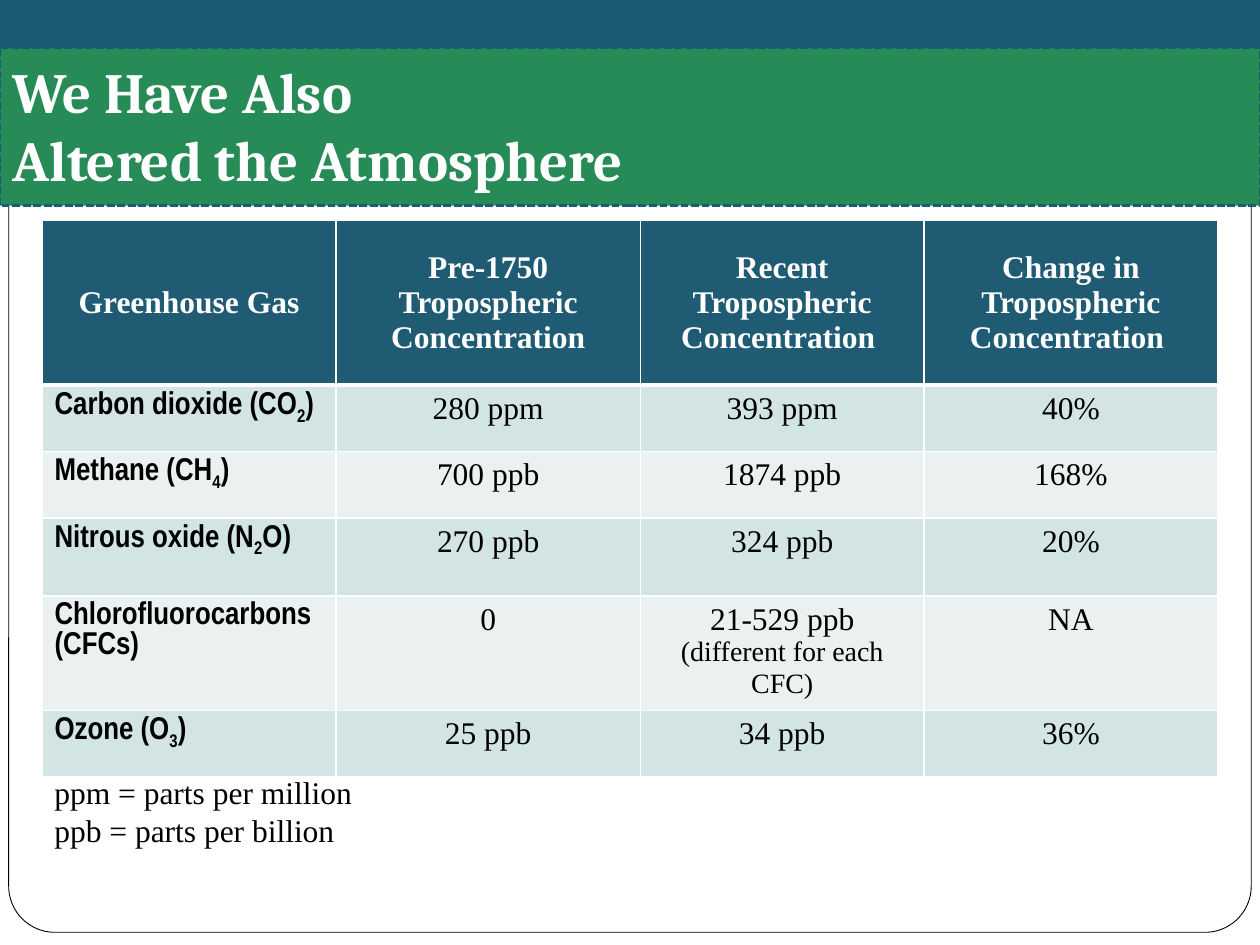
from dataclasses import dataclass

from lxml.etree import SubElement
from pptx import Presentation
from pptx.dml.color import RGBColor
from pptx.enum.dml import MSO_LINE
from pptx.enum.shapes import MSO_SHAPE
from pptx.enum.text import MSO_ANCHOR, PP_ALIGN
from pptx.oxml.ns import qn
from pptx.util import Pt


@dataclass(frozen=True)
class Theme:
    white: RGBColor = RGBColor.from_string("FFFFFF")
    black: RGBColor = RGBColor.from_string("000000")
    blue: RGBColor = RGBColor.from_string("1B5C75")
    green: RGBColor = RGBColor.from_string("278B57")
    header: RGBColor = RGBColor.from_string("1F5B73")
    bands: tuple = (RGBColor.from_string("D2E4E4"), RGBColor.from_string("EBF0F1"))
    title_font: str = "Cambria"
    label_font: str = "Arial Narrow"
    body_font: str = "Times New Roman"
    title_size: float = 32.4
    body_size: float = 18
    note_size: float = 16


THEME = Theme()


def style_runs(paragraph, font, size, color, bold=False):
    for run in paragraph.runs:
        run.font.name = font
        run.font.size = Pt(size)
        run.font.color.rgb = color
        run.font.bold = bold


def add_panel(kind, left, top, width, height, fill, line, line_width):
    panel = slide.shapes.add_shape(kind, Pt(left), Pt(top), Pt(width), Pt(height))
    panel.shadow.inherit = False
    panel.fill.solid()
    panel.fill.fore_color.rgb = fill
    panel.line.color.rgb = line
    panel.line.width = Pt(line_width)
    return panel


prs = Presentation()
prs.slide_width, prs.slide_height = Pt(720), Pt(540)
slide = prs.slides.add_slide(prs.slide_layouts[6])

frame = add_panel(MSO_SHAPE.ROUNDED_RECTANGLE, 5, 5.75, 710, 527,
                  THEME.white, THEME.black, 0.5)
frame.adjustments[0] = 0.05

# Gas names are split into runs, so every second part is a subscript.
HEADINGS = [
    "Greenhouse Gas",
    "Pre-1750 Tropospheric Concentration",
    "Recent Tropospheric Concentration ",
    "Change in Tropospheric Concentration ",
]
GASES = [
    (("Carbon dioxide (CO", "2", ")"), "280 ppm", "393 ppm", "40%"),
    (("Methane (CH", "4", ")"), "700 ppb", "1874 ppb", "168%"),
    (("Nitrous oxide (N", "2", "O)"), "270 ppb", "324 ppb", "20%"),
    (("Chlorofluorocarbons (CFCs)",), "0",
     "21-529 ppb\n(different for each CFC)", "NA"),
    (("Ozone (O", "3", ")"), "25 ppb", "34 ppb", "36%"),
]
COLUMN_WIDTHS = [168, 174, 162, 168]
ROW_HEIGHTS = [94, 38, 38, 44.5, 65.5, 38]

gas_table = slide.shapes.add_table(
    len(ROW_HEIGHTS), len(COLUMN_WIDTHS), Pt(24), Pt(126),
    Pt(sum(COLUMN_WIDTHS)), Pt(sum(ROW_HEIGHTS))).table
for column, width in zip(gas_table.columns, COLUMN_WIDTHS):
    column.width = Pt(width)
for row, height in zip(gas_table.rows, ROW_HEIGHTS):
    row.height = Pt(height)

for r, entries in enumerate([HEADINGS] + GASES):
    for c, entry in enumerate(entries):
        cell = gas_table.cell(r, c)
        cell_props = cell._tc.get_or_add_tcPr()
        for side in ("lnL", "lnR", "lnT", "lnB"):
            thick = (r, side) in ((0, "lnB"), (1, "lnT"))
            border = SubElement(cell_props, qn(f"a:{side}"), w=str(Pt(3 if thick else 1)))
            border_fill = SubElement(border, qn("a:solidFill"))
            SubElement(border_fill, qn("a:srgbClr"), val=str(THEME.white))
        cell.fill.solid()
        cell.fill.fore_color.rgb = THEME.bands[(r - 1) % 2] if r else THEME.header

        if r and c == 0:
            label = cell.text_frame.paragraphs[0]
            for i, part in enumerate(entry):
                run = label.add_run()
                run.text = part
                if i % 2:
                    run._r.get_or_add_rPr().set("baseline", "-25000")
            style_runs(label, THEME.label_font, THEME.body_size, THEME.black, True)
            continue

        cell.text_frame.text = entry
        cell.vertical_anchor = MSO_ANCHOR.TOP if r else MSO_ANCHOR.MIDDLE
        for i, paragraph in enumerate(cell.text_frame.paragraphs):
            paragraph.alignment = PP_ALIGN.CENTER
            style_runs(paragraph, THEME.body_font,
                       THEME.note_size if i else THEME.body_size,
                       THEME.black if r else THEME.white, r == 0)

add_panel(MSO_SHAPE.RECTANGLE, 0, 0, 720, 30, THEME.blue, THEME.blue, 2)

title = add_panel(MSO_SHAPE.RECTANGLE, 0, 27.5, 720, 90, THEME.green, THEME.blue, 1.5)
title.line.dash_style = MSO_LINE.SQUARE_DOT
title.text_frame.text = "We Have Also \vAltered the Atmosphere"
title.text_frame.vertical_anchor = MSO_ANCHOR.BOTTOM
title.text_frame.margin_bottom = Pt(7.2)
heading = title.text_frame.paragraphs[0]
heading.alignment = PP_ALIGN.LEFT
style_runs(heading, THEME.title_font, THEME.title_size, THEME.white, True)

units = slide.shapes.add_textbox(Pt(24), Pt(438), Pt(186), Pt(51)).text_frame
units.word_wrap = True
units.text = "ppm = parts per million\nppb = parts per billion"
for definition in units.paragraphs:
    style_runs(definition, THEME.body_font, THEME.body_size, THEME.black)

prs.save("out.pptx")
